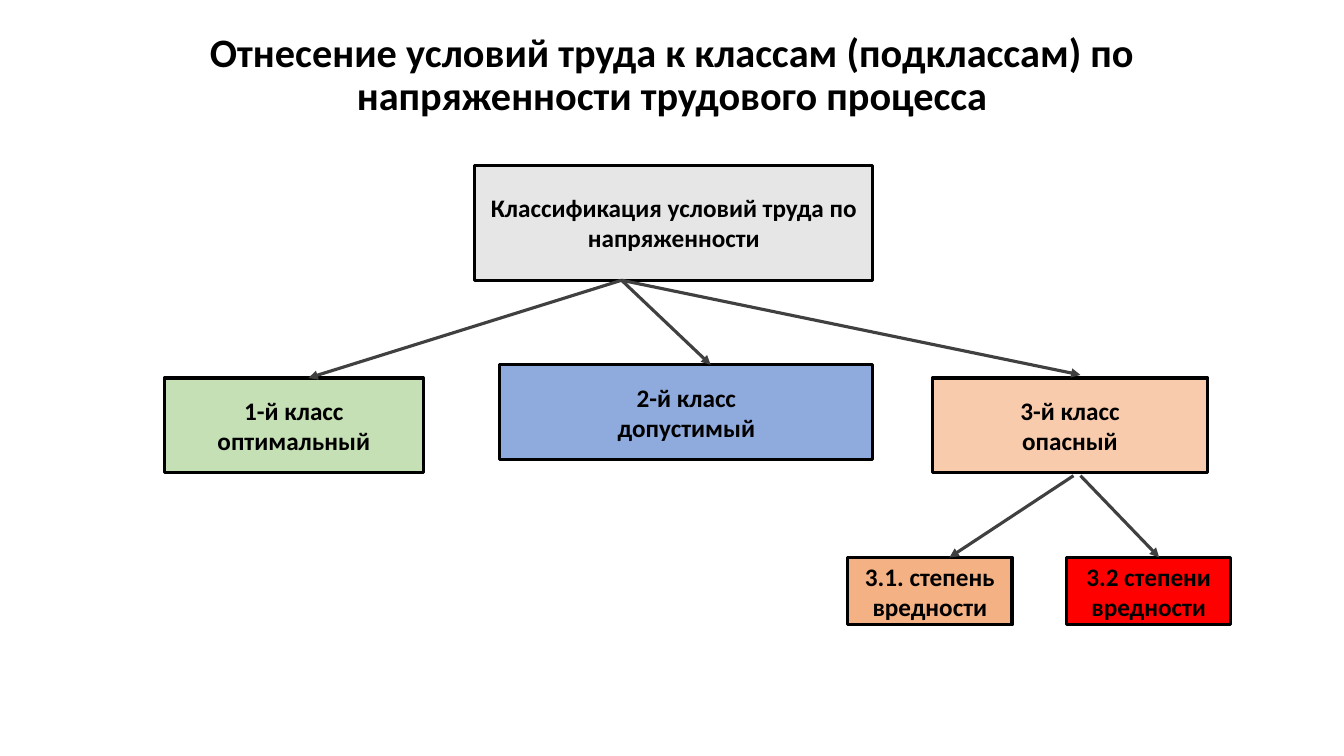
from pptx import Presentation
from pptx.dml.color import RGBColor
from pptx.enum import shapes, text
from pptx.oxml import ns
from pptx.util import Pt
from lxml import etree

BLACK = RGBColor(0x00, 0x00, 0x00)
ARROW_GRAY = RGBColor(0x40, 0x40, 0x40)
LIGHT_GRAY = RGBColor(0xE7, 0xE6, 0xE6)
GREEN = RGBColor(0xC5, 0xE0, 0xB4)
BLUE = RGBColor(0x8F, 0xAA, 0xDC)
PEACH = RGBColor(0xF8, 0xCB, 0xAD)
ORANGE = RGBColor(0xF4, 0xB1, 0x83)
RED = RGBColor(0xFF, 0x00, 0x00)


class Diagram:
    font = "Calibri"
    title_size = 28.8
    box_size = 18
    line_width = 2.25

    def __init__(self, page):
        self.page = page

    def add_lines(self, frame, lines, size, spacing=None):
        """Fill a text frame with centred bold paragraphs, one per line."""
        frame.word_wrap = True
        frame.auto_size = text.MSO_AUTO_SIZE.NONE
        frame.vertical_anchor = text.MSO_ANCHOR.MIDDLE
        for index, line in enumerate(lines):
            para = frame.add_paragraph() if index else frame.paragraphs[0]
            para.alignment = text.PP_ALIGN.CENTER
            para.line_spacing = spacing
            span = para.add_run()
            span.text = line
            span.font.name = self.font
            span.font.size = Pt(size)
            span.font.bold = True
            span.font.color.rgb = BLACK

    def title(self, line, left, top, width, height):
        title = self.page.shapes.title
        title.left, title.top = Pt(left), Pt(top)
        title.width, title.height = Pt(width), Pt(height)
        self.add_lines(title.text_frame, [line], self.title_size, 0.9)

    def box(self, lines, fill, left, top, width, height):
        box = self.page.shapes.add_shape(
            shapes.MSO_SHAPE.RECTANGLE, Pt(left), Pt(top), Pt(width), Pt(height))
        box.shadow.inherit = False
        box.fill.solid()
        box.fill.fore_color.rgb = fill
        box.line.color.rgb = BLACK
        box.line.width = Pt(self.line_width)
        self.add_lines(box.text_frame, lines, self.box_size)

    def arrow(self, start, end):
        arrow = self.page.shapes.add_connector(
            shapes.MSO_CONNECTOR.STRAIGHT, *map(Pt, start + end))
        arrow.line.color.rgb = ARROW_GRAY
        arrow.line.width = Pt(self.line_width)
        properties = arrow.element.spPr
        outline = properties.find(ns.qn("a:ln"))
        etree.SubElement(outline, ns.qn("a:tailEnd"), type="triangle")
        etree.SubElement(properties, ns.qn("a:effectLst"))


def main():
    deck = Presentation()
    deck.slide_width, deck.slide_height = Pt(960), Pt(540)
    diagram = Diagram(deck.slides.add_slide(deck.slide_layouts[5]))

    diagram.title("Отнесение условий труда к классам (подклассам) по "
                  "напряженности трудового процесса", 66.2, 28.8, 828, 51.1)
    diagram.box(["Классификация условий труда по напряженности"],
                LIGHT_GRAY, 339.1, 118.1, 284.4, 82.1)

    class_height = 67.7
    for lines, fill, left, top, width in (
            (["1-й класс", "оптимальный"], GREEN, 117.4, 270, 185),
            (["2-й класс", "допустимый"], BLUE, 357.1, 260.6, 266.4),
            (["3-й класс", "опасный"], PEACH, 666, 270, 196.6)):
        diagram.box(lines, fill, left, top, width, class_height)

    degree_top = 398.2
    for lines, fill, left in (
            (["3.1. степень", "вредности"], ORANGE, 605.5),
            (["3.2 степени вредности"], RED, 761.8)):
        diagram.box(lines, fill, left, degree_top, 117.4, 48.2)

    root_exit = (444, 200.2)
    for class_entry in ((220.3, 270), (507.6, 260.6), (771.8, 267.8)):
        diagram.arrow(root_exit, class_entry)
    for exit_x, entry_x in ((766.8, 678.2), (771.8, 828)):
        diagram.arrow((exit_x, 339.8), (entry_x, degree_top))

    deck.save("out.pptx")


if __name__ == "__main__":
    main()
